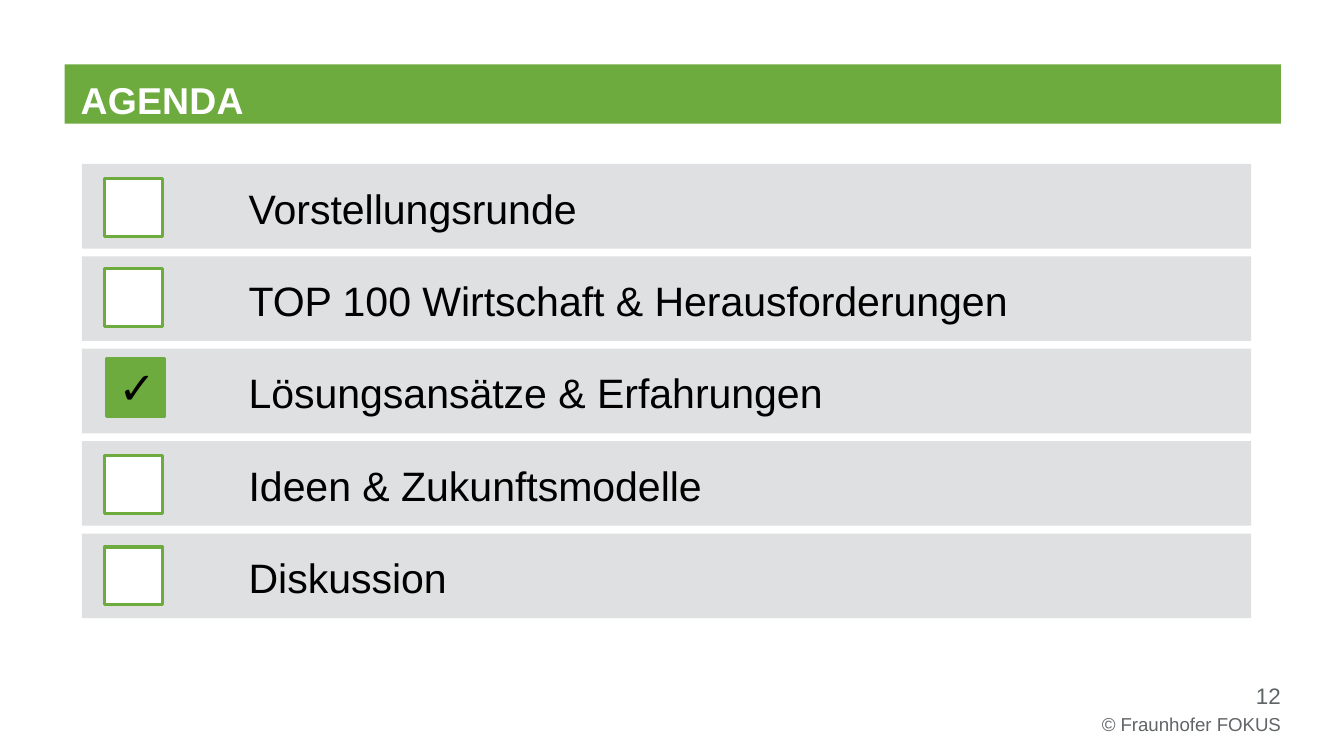
from dataclasses import dataclass
from pptx import Presentation
from pptx.dml.color import RGBColor
from pptx.enum.shapes import MSO_SHAPE as Preset
from pptx.enum.text import MSO_ANCHOR as Anchor, MSO_AUTO_SIZE as AutoSize, PP_ALIGN as Align
from pptx.util import Inches, Pt

TITLE = "AGENDA"
AGENDA = [
    ("Vorstellungsrunde", 1.33, False),
    ("TOP 100 Wirtschaft & Herausforderungen", 2.0, False),
    ("Lösungsansätze & Erfahrungen", 2.67, True),
    ("Ideen & Zukunftsmodelle", 3.39, False),
    ("Diskussion", 4.07, False),
]
FOOTER = [
    ("12", 12, (0.49, 5.07, 9.04, 0.21)),
    ("© Fraunhofer FOKUS", 10, (0.47, 5.29, 9.06, 0.19)),
]


@dataclass(frozen=True)
class Theme:
    font: str = "Arial"
    green: str = "6EAB3E"
    bar: str = "DFE0E1"
    white: str = "FFFFFF"
    black: str = "000000"
    grey: str = "616567"
    title_size: int = 20
    item_size: int = 22
    check_size: int = 24


THEME = Theme()
SLIDE_WIDTH = Inches(10)
SLIDE_HEIGHT = SLIDE_WIDTH * 9 // 16
BAR_LEFT, BAR_WIDTH, BAR_HEIGHT = 0.61, 8.7, 0.63
FIRST_BAR, LAST_BAR = 1.22, 3.97
PITCH = (LAST_BAR - FIRST_BAR) / (len(AGENDA) - 1)
BOX_LEFT, BOX_SIZE = 0.78, 0.43


def rgb(code):
    return RGBColor.from_string(code)


def write(shape, text, size, color, inset=0, leading=None, align=Align.LEFT,
          anchor=Anchor.MIDDLE, bold=False, wrap=True):
    frame = shape.text_frame
    frame.text = text
    frame.word_wrap = wrap
    frame.auto_size = AutoSize.NONE
    frame.vertical_anchor = anchor
    frame.margin_left = Inches(inset)
    frame.margin_top = frame.margin_right = frame.margin_bottom = 0
    paragraph = frame.paragraphs[0]
    paragraph.alignment = align
    paragraph.space_before = Pt(0)
    if leading:
        paragraph.line_spacing = Pt(leading)
    font = paragraph.font
    font.name, font.size, font.bold = THEME.font, Pt(size), bold
    font.color.rgb = rgb(color)


def add_text(slide, area, text, size, color, **style):
    box = slide.shapes.add_textbox(*map(Inches, area))
    write(box, text, size, color, **style)


def add_rect(slide, area, fill, line=None):
    rect = slide.shapes.add_shape(Preset.RECTANGLE, *map(Inches, area))
    rect.shadow.inherit = False
    rect.fill.solid()
    rect.fill.fore_color.rgb = rgb(fill)
    if line:
        rect.line.color.rgb = rgb(line)
        rect.line.width = Pt(1.75)
    else:
        rect.line.fill.background()


def add_title(slide):
    title = slide.shapes.title
    title.left, title.top, title.width, title.height = map(Inches, (0.48, 0.48, 9.05, 0.44))
    title.fill.solid()
    title.fill.fore_color.rgb = rgb(THEME.green)
    write(title, TITLE, THEME.title_size, THEME.white, inset=0.12, leading=30, bold=True)
    title.text_frame.paragraphs[0].runs[0].font._element.set("spc", "10")


def add_item(slide, top, label, box_top, checked):
    add_rect(slide, (BAR_LEFT, top, BAR_WIDTH, BAR_HEIGHT), THEME.bar)
    add_text(slide, (1.68, top, 1, BAR_HEIGHT), label, THEME.item_size, THEME.black,
             inset=0.17, leading=28, wrap=False)
    box_left = BOX_LEFT + (0.01 if checked else 0)
    add_rect(slide, (box_left, box_top, BOX_SIZE, BOX_SIZE),
             THEME.green if checked else THEME.white, THEME.green)
    if checked:
        add_text(slide, (0.71, box_top + 0.02, 0.51, 0.45), "✓", THEME.check_size, THEME.black,
                 inset=0.17, leading=28, anchor=Anchor.TOP, wrap=False)


def main():
    deck = Presentation()
    deck.slide_width, deck.slide_height = SLIDE_WIDTH, SLIDE_HEIGHT
    slide = deck.slides.add_slide(deck.slide_layouts[5])
    add_title(slide)
    for row, item in enumerate(AGENDA):
        add_item(slide, FIRST_BAR + row * PITCH, *item)
    for text, size, area in FOOTER:
        add_text(slide, area, text, size, THEME.grey, align=Align.RIGHT)
    deck.save("out.pptx")


if __name__ == "__main__":
    main()
